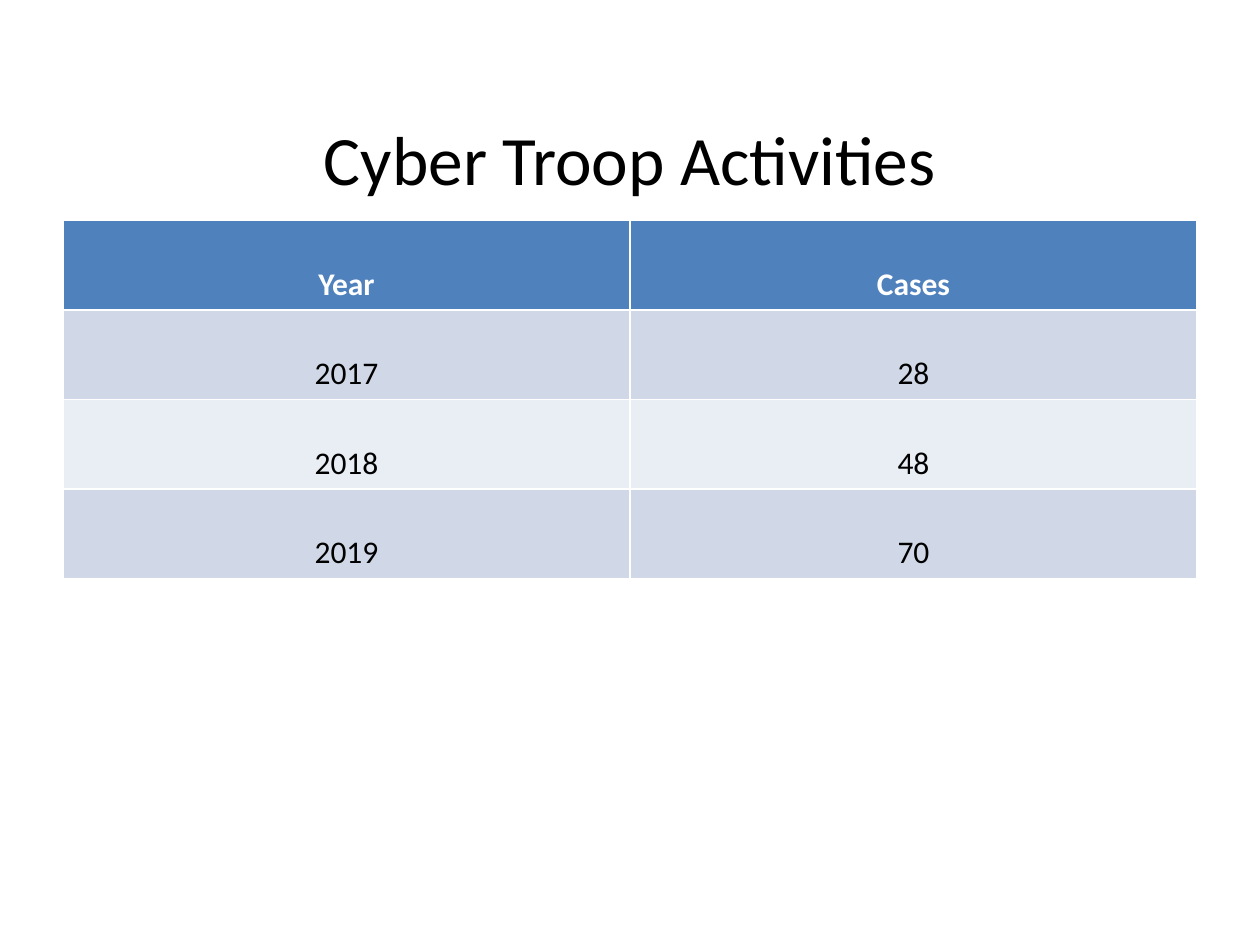
from pptx import Presentation
from pptx.dml.color import RGBColor
from pptx.enum.text import MSO_ANCHOR, PP_ALIGN
from pptx.util import Inches, Pt

FONT = "Calibri"
BLACK, WHITE = "000000", "FFFFFF"
HEADER_FILL = "4F81BD"
BAND_FILLS = ("D0D8E8", "E9EDF4")
CASES_BY_YEAR = [("Year", "Cases"), ("2017", "28"), ("2018", "48"), ("2019", "70")]


def color(hex_value):
    return RGBColor.from_string(hex_value)


def set_text(text_frame, text, size, hex_color, bold=False):
    """Write one centred, double-spaced paragraph."""
    text_frame.text = text
    paragraph = text_frame.paragraphs[0]
    paragraph.alignment = PP_ALIGN.CENTER
    paragraph.line_spacing = 2.0
    font = paragraph.runs[0].font
    font.name, font.size, font.bold = FONT, Pt(size), bold
    font.color.rgb = color(hex_color)


def add_title(slide, text):
    title = slide.shapes.title
    title.left, title.top = Inches(0.5), Inches(0.3)
    title.width, title.height = Inches(9), Inches(1.25)
    title.text_frame.vertical_anchor = MSO_ANCHOR.MIDDLE
    set_text(title.text_frame, text, 39.6, BLACK)


def add_cases_table(slide, rows):
    row_height = Inches(0.41)
    frame = slide.shapes.add_table(
        len(rows), len(rows[0]), Inches(0.5), Inches(1.75),
        Inches(9), row_height * len(rows))
    for row_index, values in enumerate(rows):
        is_header = row_index == 0
        fill = HEADER_FILL if is_header else BAND_FILLS[(row_index - 1) % 2]
        for column_index, value in enumerate(values):
            cell = frame.table.cell(row_index, column_index)
            cell.fill.solid()
            cell.fill.fore_color.rgb = color(fill)
            set_text(cell.text_frame, value, 18, WHITE if is_header else BLACK, is_header)


def main():
    presentation = Presentation()
    presentation.slide_width, presentation.slide_height = Inches(10), Inches(7.5)
    title_only_layout = presentation.slide_layouts[5]
    slide = presentation.slides.add_slide(title_only_layout)
    add_title(slide, "Cyber Troop Activities")
    add_cases_table(slide, CASES_BY_YEAR)
    presentation.save("out.pptx")


if __name__ == "__main__":
    main()
